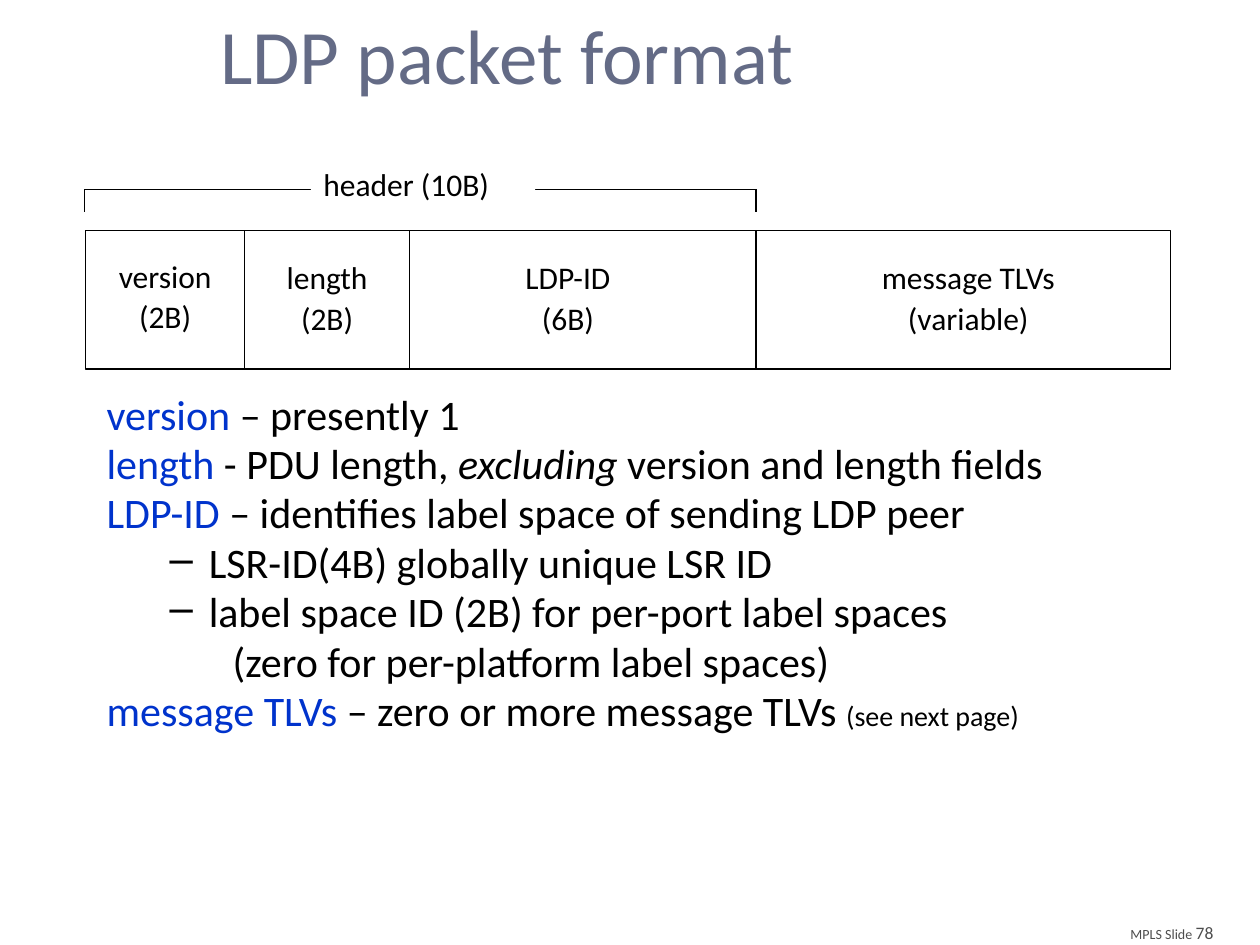
from pptx import Presentation
from pptx.dml.color import RGBColor
from pptx.enum.shapes import MSO_CONNECTOR as Connector, MSO_SHAPE as Shape
from pptx.enum.text import PP_ALIGN as Align
from pptx.oxml.ns import qn
from pptx.util import Cm, Pt
from lxml import etree

FONT = "Calibri"
BLACK = RGBColor(0x00, 0x00, 0x00)
WHITE = RGBColor(0xFF, 0xFF, 0xFF)
BLUE = RGBColor(0x00, 0x33, 0xCC)
SLATE = RGBColor(0x64, 0x6B, 0x86)
GRAY = RGBColor(0x4D, 0x4D, 0x4D)

# Content: packet fields as name, size, right edge, label width, label shift, label top (cm)
FIELDS = [
    ("version", "(2B)", 4.93, 2.8, 0, 5.05),
    ("length", "(2B)", 8.26, 2.46, 0, 5.08),
    ("LDP-ID", "(6B)", 15.24, 3.07, -0.3, 5.08),
    ("message TLVs", "(variable)", 23.6, 5.33, 0.1, 5.08),
]
# Body lines: level, then runs of text with their own format
BODY = [
    (0, [("version", {"color": BLUE}), (" – presently 1", {})]),
    (0, [("length", {"color": BLUE}), (" - PDU length, ", {}),
         ("excluding", {"italic": True}), (" version and length fields", {})]),
    (0, [("LDP-ID", {"color": BLUE}),
         (" – identifies label space of sending LDP peer", {})]),
    (1, [("LSR-ID(4B) globally unique LSR ID", {})]),
    (1, [("label space ID (2B) for per-port label spaces", {})]),
    (2, [("(zero for per-platform label spaces)", {})]),
    (0, [("message TLVs ", {"color": BLUE}), ("– zero or more message TLVs ", {}),
         ("(see next page)", {"size": 16})]),
]
# Level: left margin, first-line indent (cm), bullet
LEVELS = [(0.95, -0.95, None), (2.06, -0.79, "–"), (3.18, -0.64, None)]

TABLE_LEFT, TABLE_TOP, TABLE_HEIGHT = 1.73, 4.65, 2.79
BRACKET_LEFT, BRACKET_RIGHT, BRACKET_TOP, TICK = 1.7, 15.24, 3.82, 0.46

presentation = Presentation()
presentation.slide_width, presentation.slide_height = Cm(25.4), Cm(19.05)
slide = presentation.slides.add_slide(presentation.slide_layouts[6])


def add_run(paragraph, text, size=18, color=BLACK, italic=False):
    run = paragraph.add_run()
    run.text = text
    run.font.name, run.font.size = FONT, Pt(size)
    run.font.color.rgb, run.font.italic = color, italic


def add_text(paragraphs, left, top, width, height, align=Align.LEFT,
             space_before=0, line_spacing=1.0, **font):
    """Add a text box; each paragraph is a list of (text, format) runs."""
    box = slide.shapes.add_textbox(Cm(left), Cm(top), Cm(width), Cm(height))
    frame = box.text_frame
    frame.word_wrap = True
    for index, runs in enumerate(paragraphs):
        paragraph = frame.paragraphs[0] if index == 0 else frame.add_paragraph()
        paragraph.alignment = align
        paragraph.line_spacing = line_spacing
        paragraph.space_before = Pt(space_before if index else 0)
        for text, own in runs:
            add_run(paragraph, text, **{**font, **own})
    return box


def set_level(paragraph, level):
    margin, indent, bullet = LEVELS[level]
    properties = paragraph._p.get_or_add_pPr()
    properties.set("marL", str(Cm(margin)))
    properties.set("indent", str(Cm(indent)))
    if bullet:
        etree.SubElement(properties, qn("a:buChar")).set("char", bullet)


def add_line(x1, y1, x2, y2):
    line = slide.shapes.add_connector(Connector.STRAIGHT, Cm(x1), Cm(y1), Cm(x2), Cm(y2))
    line.line.color.rgb, line.line.width = BLACK, Pt(0.75)
    etree.SubElement(line._element.spPr, qn("a:effectLst"))


def add_rectangle(left, top, width, height):
    rectangle = slide.shapes.add_shape(Shape.RECTANGLE, Cm(left), Cm(top), Cm(width), Cm(height))
    rectangle.shadow.inherit = False
    return rectangle


# Title and page number
add_text([[("LDP packet format", {})]], 1, 0.03, 18.44, 2.77,
         align=Align.CENTER, size=44, color=SLATE)
add_text([[("MPLS Slide ", {"size": 8}), ("78", {"size": 10})]], 22.2, 18.47, 2.51, 0.69,
         align=Align.RIGHT, color=GRAY)

# Field descriptions
body = add_text([runs for _, runs in BODY], 1.9, 7.75, 21.6, 9.2, line_spacing=0.98, size=24)
for paragraph, (level, _) in zip(body.text_frame.paragraphs, BODY):
    set_level(paragraph, level)

# Packet outline, dividers and field labels
table_right = FIELDS[-1][2]
outline = add_rectangle(TABLE_LEFT, TABLE_TOP, table_right - TABLE_LEFT, TABLE_HEIGHT)
outline.fill.background()
outline.line.color.rgb, outline.line.width = BLACK, Pt(0.75)
left = TABLE_LEFT
for name, size, right, width, shift, top in FIELDS:
    if right < table_right:
        add_line(right, TABLE_TOP, right, TABLE_TOP + TABLE_HEIGHT)
    add_text([[(name, {})], [(size, {})]], (left + right - width) / 2 + shift, top,
             width, 2.03, align=Align.CENTER, space_before=1.6)
    left = right

# Header bracket, with its label over a white gap
add_line(BRACKET_LEFT, BRACKET_TOP, BRACKET_RIGHT, BRACKET_TOP)
for x in (BRACKET_LEFT, BRACKET_RIGHT):
    add_line(x, BRACKET_TOP, x, BRACKET_TOP + TICK)
gap = add_rectangle(6.27, 3.2, 4.52, 1.09)
gap.fill.solid()
gap.fill.fore_color.rgb = WHITE
gap.line.fill.background()
add_text([[("header (10B)", {})]], 6.27, 3.2, 4.52, 1.09)

presentation.save("out.pptx")
